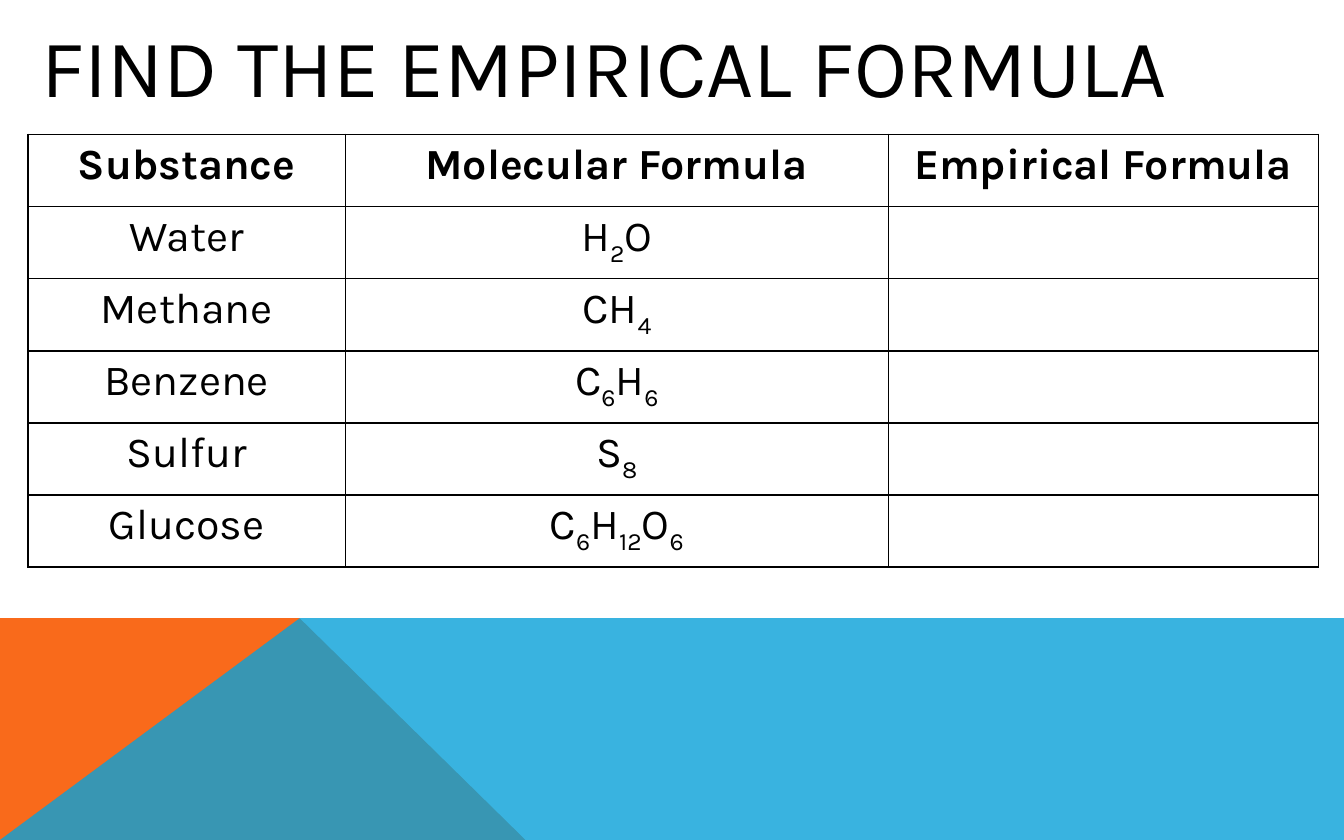
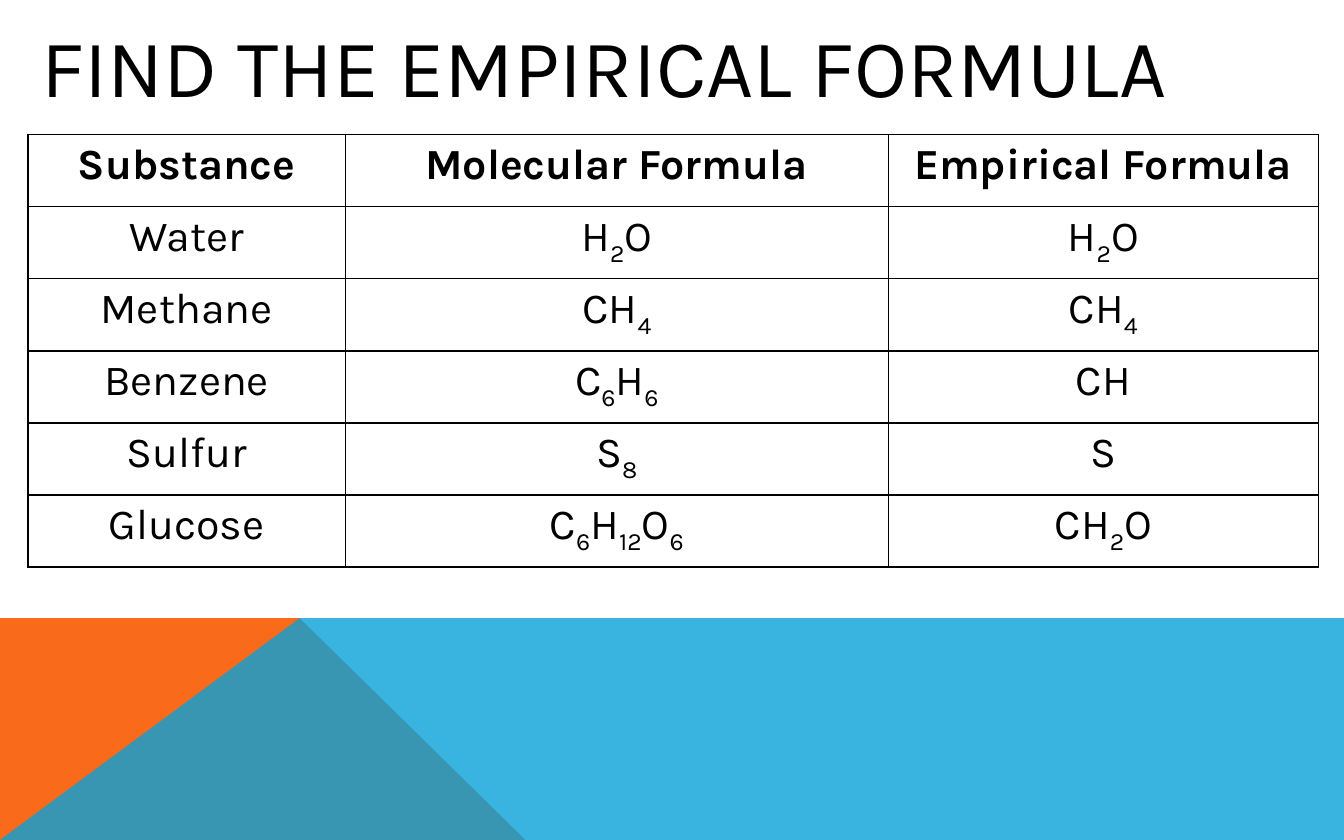
from itertools import groupby

from pptx import Presentation
from pptx.dml.color import RGBColor
from pptx.enum.text import MSO_ANCHOR, PP_ALIGN
from pptx.oxml import parse_xml
from pptx.oxml.ns import nsdecls
from pptx.oxml.xmlchemy import OxmlElement
from pptx.util import Inches, Pt

COLOURS = {"ink": "000000", "orange": "F96A1B", "blue": "08A1D9"}
TITLE = "FIND THE EMPIRICAL FORMULA"
HEADINGS = ["Substance", "Molecular Formula", "Empirical Formula"]
SUBSTANCES = [
    ("Water", "H2O", "H2O"),
    ("Methane", "CH4", "CH4"),
    ("Benzene", "C6H6", "CH"),
    ("Sulfur", "S8", "S"),
    ("Glucose", "C6H12O6", "CH2O"),
]
COLUMN_WIDTHS = [23.6, 40.4, 32]
LEFT, WIDTH = 2.1, 96
BAND_TOP, PEAK = 73.6, 22.3


class Deck:
    """Style and current slide, measured on a grid of 100 columns by 100 rows."""

    font = "Karla"

    def __init__(self):
        self.deck = Presentation()
        self.deck.slide_width = Inches(10)
        self.deck.slide_height = Inches(6.25)
        self.page = None

    def across(self, columns):
        """Turn grid columns into a length."""
        return round(self.deck.slide_width * columns / 100)

    def down(self, rows):
        """Turn grid rows into a length."""
        return round(self.deck.slide_height * rows / 100)

    def area(self, left, top, width, height):
        """Turn a grid area into left, top, width and height."""
        return self.across(left), self.down(top), self.across(width), self.down(height)

    def add_page(self):
        """Start a slide with the coloured bands at its foot."""
        self.page = self.deck.slides.add_slide(self.deck.slide_layouts[6])
        self.band([(0, 100), (0, BAND_TOP), (PEAK, BAND_TOP), (39.1, 100)], "orange")
        self.band([(0, 100), (PEAK, BAND_TOP), (100, BAND_TOP), (100, 100)], "blue", 80)

    def band(self, corners, colour, opacity=100):
        """Draw a filled outline through the corners."""
        points = [(self.across(x), self.down(y)) for x, y in corners]
        builder = self.page.shapes.build_freeform(*points[0])
        builder.add_line_segments(points[1:], close=True)
        shape = builder.convert_to_shape()
        shape.shadow.inherit = False
        shape.line.fill.background()
        shape.fill.solid()
        shape.fill.fore_color.rgb = RGBColor.from_string(COLOURS[colour])
        if opacity < 100:
            alpha = OxmlElement("a:alpha")
            alpha.set("val", str(opacity * 1000))
            shape.fill._xPr.find(".//{*}srgbClr").append(alpha)

    def style(self, span, size, bold=False):
        """Format one run of text."""
        span.font.name = self.font
        span.font.size = Pt(size)
        span.font.bold = bold
        span.font.color.rgb = RGBColor.from_string(COLOURS["ink"])

    def title(self, text):
        """Write the slide title."""
        box = self.page.shapes.add_textbox(*self.area(LEFT, 1.92, WIDTH, 11.52))
        frame = box.text_frame
        frame.word_wrap = True
        frame.vertical_anchor = MSO_ANCHOR.MIDDLE
        frame.text = text
        self.style(frame.paragraphs[0].runs[0], 44)

    def table(self, rows):
        """Draw a ruled table with a bold heading row."""
        table = self.page.shapes.add_table(
            len(rows), len(COLUMN_WIDTHS), *self.area(LEFT, 16, WIDTH, 51.52)
        ).table
        table.first_row = table.horz_banding = False
        for column, width in zip(table.columns, COLUMN_WIDTHS):
            column.width = self.across(width)
        for row_number, row in enumerate(rows):
            for column_number, text in enumerate(row):
                cell = table.cell(row_number, column_number)
                self.rule(cell)
                self.formula(cell, text, bold=row_number == 0)

    def rule(self, cell):
        """Give a cell its four borders, margins and an empty fill."""
        properties = cell._tc.get_or_add_tcPr()
        for side in "LRTB":
            properties.append(parse_xml(
                f'<a:ln{side} {nsdecls("a")} w="{Pt(1)}"><a:solidFill>'
                f'<a:srgbClr val="{COLOURS["ink"]}"/></a:solidFill></a:ln{side}>'
            ))
        cell.fill.background()
        cell.margin_left = cell.margin_right = Inches(0.1)
        cell.margin_top = cell.margin_bottom = Inches(0.04)

    def formula(self, cell, text, bold):
        """Write centred text with its digits as subscripts."""
        para = cell.text_frame.paragraphs[0]
        para.alignment = PP_ALIGN.CENTER
        for is_count, letters in groupby(text, str.isdigit):
            span = para.add_run()
            span.text = "".join(letters)
            self.style(span, 23, bold)
            if is_count:
                span._r.get_or_add_rPr().set("baseline", "-25000")


def main():
    """Build the exercise slide and then the answer slide."""
    deck = Deck()
    for show_answers in (False, True):
        deck.add_page()
        deck.title(TITLE)
        rows = [
            (name, molecular, empirical if show_answers else "")
            for name, molecular, empirical in SUBSTANCES
        ]
        deck.table([HEADINGS, *rows])
    deck.deck.save("out.pptx")


if __name__ == "__main__":
    main()
